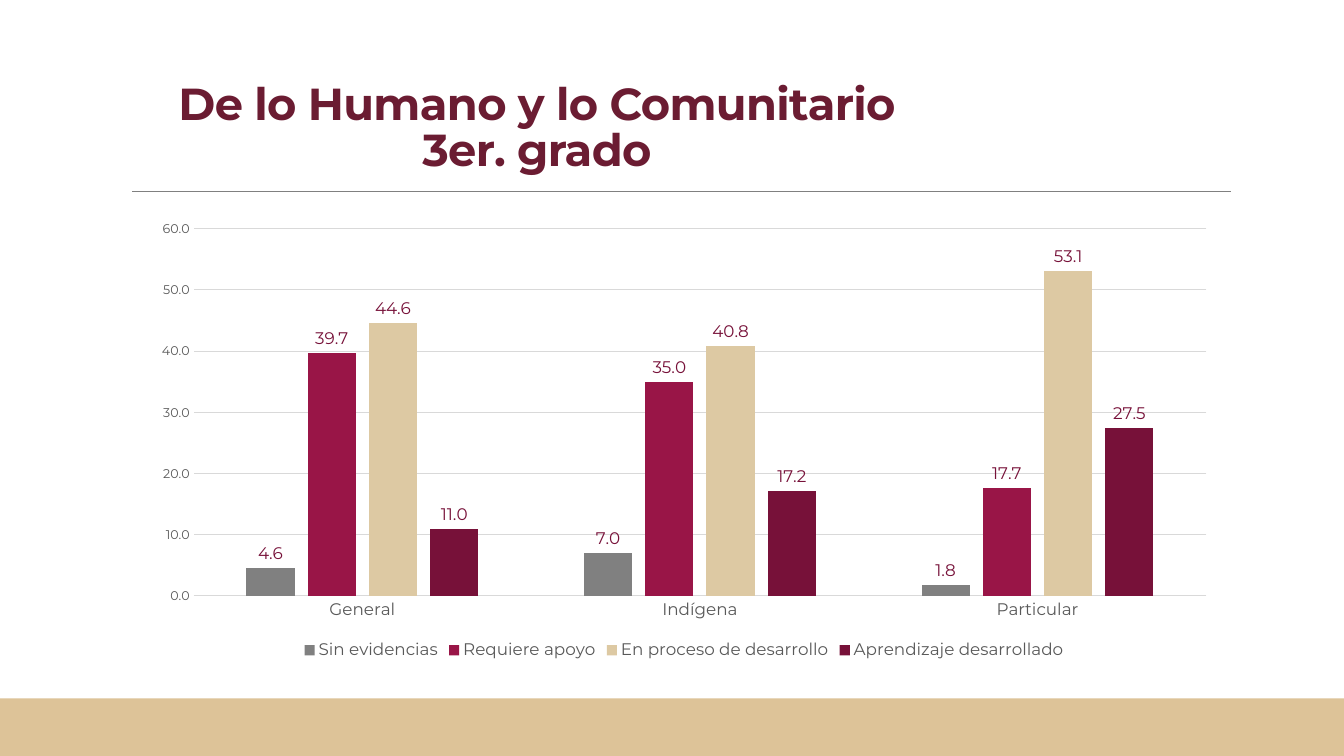
from lxml import etree
from pptx import Presentation
from pptx.chart.data import CategoryChartData
from pptx.dml.color import RGBColor
from pptx.enum.chart import XL_CHART_TYPE, XL_LABEL_POSITION, XL_LEGEND_POSITION, XL_TICK_MARK
from pptx.enum.shapes import MSO_CONNECTOR, MSO_SHAPE
from pptx.enum.text import MSO_ANCHOR, MSO_AUTO_SIZE, PP_ALIGN
from pptx.oxml.ns import qn
from pptx.util import Inches, Pt

COLUMNS = XL_CHART_TYPE.COLUMN_CLUSTERED
OUTSIDE = XL_LABEL_POSITION.OUTSIDE_END
BOTTOM = XL_LEGEND_POSITION.BOTTOM
NO_TICK = XL_TICK_MARK.NONE
STRAIGHT = MSO_CONNECTOR.STRAIGHT
RECT = MSO_SHAPE.RECTANGLE
MIDDLE = MSO_ANCHOR.MIDDLE
NO_FIT = MSO_AUTO_SIZE.NONE
CENTER = PP_ALIGN.CENTER

WHITE = RGBColor(0xFF, 0xFF, 0xFF)
GRAY = RGBColor(0x80, 0x80, 0x80)
GRID = RGBColor(0xD9, 0xD9, 0xD9)
TEXT = RGBColor(0x59, 0x59, 0x59)
WINE = RGBColor(0x6B, 0x1C, 0x32)
MAROON = RGBColor(0x77, 0x11, 0x39)
CRIMSON = RGBColor(0x99, 0x15, 0x47)
SAND = RGBColor(0xDD, 0xC9, 0xA3)
TAN = RGBColor(0xDD, 0xC3, 0x98)

FONT = "Montserrat"
WIDTH, HEIGHT = 13.33, 7.5
BAND_HEIGHT = 0.57
TITLE_BOX = (1, 0.76, 8.65, 1.06)
RULE_BOX = (1.31, 1.9, 10.9, 0)
CHART_BOX = (1.39, 2.1, 10.79, 4.49)
BAND_BOX = (0, HEIGHT - BAND_HEIGHT, WIDTH, BAND_HEIGHT)

CATEGORIES = ["General", "Indígena", "Particular"]
SERIES = [
    ("Sin evidencias", (4.6, 7.0, 1.8), GRAY),
    ("Requiere apoyo", (39.7, 35.0, 17.7), CRIMSON),
    ("En proceso de desarrollo", (44.6, 40.8, 53.1), SAND),
    ("Aprendizaje desarrollado", (11.0, 17.2, 27.5), MAROON),
]


def set_font(font, size, color):
    font.name = FONT
    font.size = Pt(size)
    font.color.rgb = color


def set_line(line, color, width):
    line.color.rgb = color
    line.width = Pt(width)


def add_title(slide, box):
    sp = slide.shapes.title
    sp.left, sp.top, sp.width, sp.height = map(Inches, box)
    tf = sp.text_frame
    tf.text = "De lo Humano y lo Comunitario\v3er. grado"
    tf.word_wrap = True
    tf.auto_size = NO_FIT
    tf.vertical_anchor = MIDDLE
    p = tf.paragraphs[0]
    p.alignment = CENTER
    p.line_spacing = 0.85
    p.space_before = Pt(0)
    for r in p.runs:
        set_font(r.font, 32, WINE)
        r.font.bold = True
        r.font._element.set("spc", "-50")


def add_rule(slide, box):
    x, y, w, h = map(Inches, box)
    line = slide.shapes.add_connector(STRAIGHT, x, y, x + w, y + h)
    set_line(line.line, GRAY, 0.5)
    etree.SubElement(line._element.spPr, qn("a:effectLst"))


def add_band(slide, box):
    sp = slide.shapes.add_shape(RECT, *map(Inches, box))
    sp.shadow.inherit = False
    sp.fill.solid()
    sp.fill.fore_color.rgb = TAN
    sp.line.fill.background()


def format_axes(chart):
    for axis, size in ((chart.category_axis, 12), (chart.value_axis, 9)):
        axis.major_tick_mark = NO_TICK
        axis.minor_tick_mark = NO_TICK
        set_font(axis.tick_labels.font, size, TEXT)
    set_line(chart.category_axis.format.line, GRID, 0.75)
    values = chart.value_axis
    values.minimum_scale, values.maximum_scale, values.major_unit = 0, 60, 10
    values.format.line.fill.background()
    values.has_major_gridlines = True
    set_line(values.major_gridlines.format.line, GRID, 0.75)
    values.tick_labels.number_format = "0.0"
    values.tick_labels.number_format_is_linked = False


def format_series(series, color):
    series.format.fill.solid()
    series.format.fill.fore_color.rgb = color
    series.invert_if_negative = False
    labels = series.data_labels
    labels.show_value = True
    labels.position = OUTSIDE
    labels.number_format = "0.0"
    labels.number_format_is_linked = False
    set_font(labels.font, 12, MAROON)


def add_results_chart(slide, box):
    data = CategoryChartData(number_format="0.0")
    data.categories = CATEGORIES
    for name, values, _ in SERIES:
        data.add_series(name, values)
    chart = slide.shapes.add_chart(COLUMNS, *map(Inches, box), data).chart
    chart.has_title = False
    set_font(chart.font, 12, TEXT)
    chart.has_legend = True
    chart.legend.position = BOTTOM
    chart.legend.include_in_layout = False
    set_font(chart.legend.font, 12, TEXT)
    format_axes(chart)
    plot = chart.plots[0]
    plot.vary_by_categories = False
    plot.gap_width = 219
    plot.overlap = -27
    for series, (_, _, color) in zip(plot.series, SERIES):
        format_series(series, color)


def main():
    prs = Presentation()
    prs.slide_width, prs.slide_height = Inches(WIDTH), Inches(HEIGHT)
    slide = prs.slides.add_slide(prs.slide_layouts[5])
    slide.background.fill.solid()
    slide.background.fill.fore_color.rgb = WHITE
    add_rule(slide, RULE_BOX)
    add_band(slide, BAND_BOX)
    add_title(slide, TITLE_BOX)
    add_results_chart(slide, CHART_BOX)
    prs.save("out.pptx")


if __name__ == "__main__":
    main()
